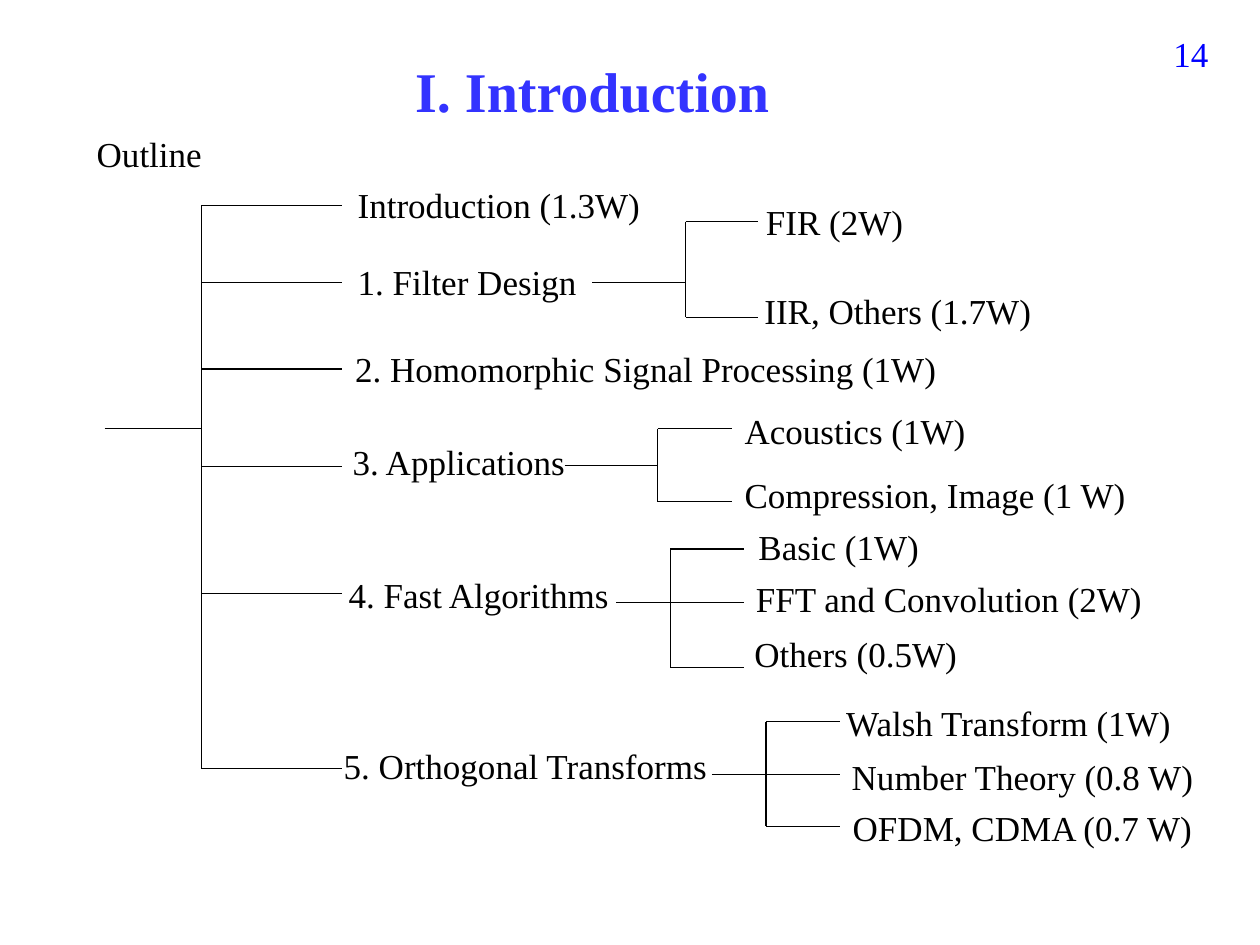
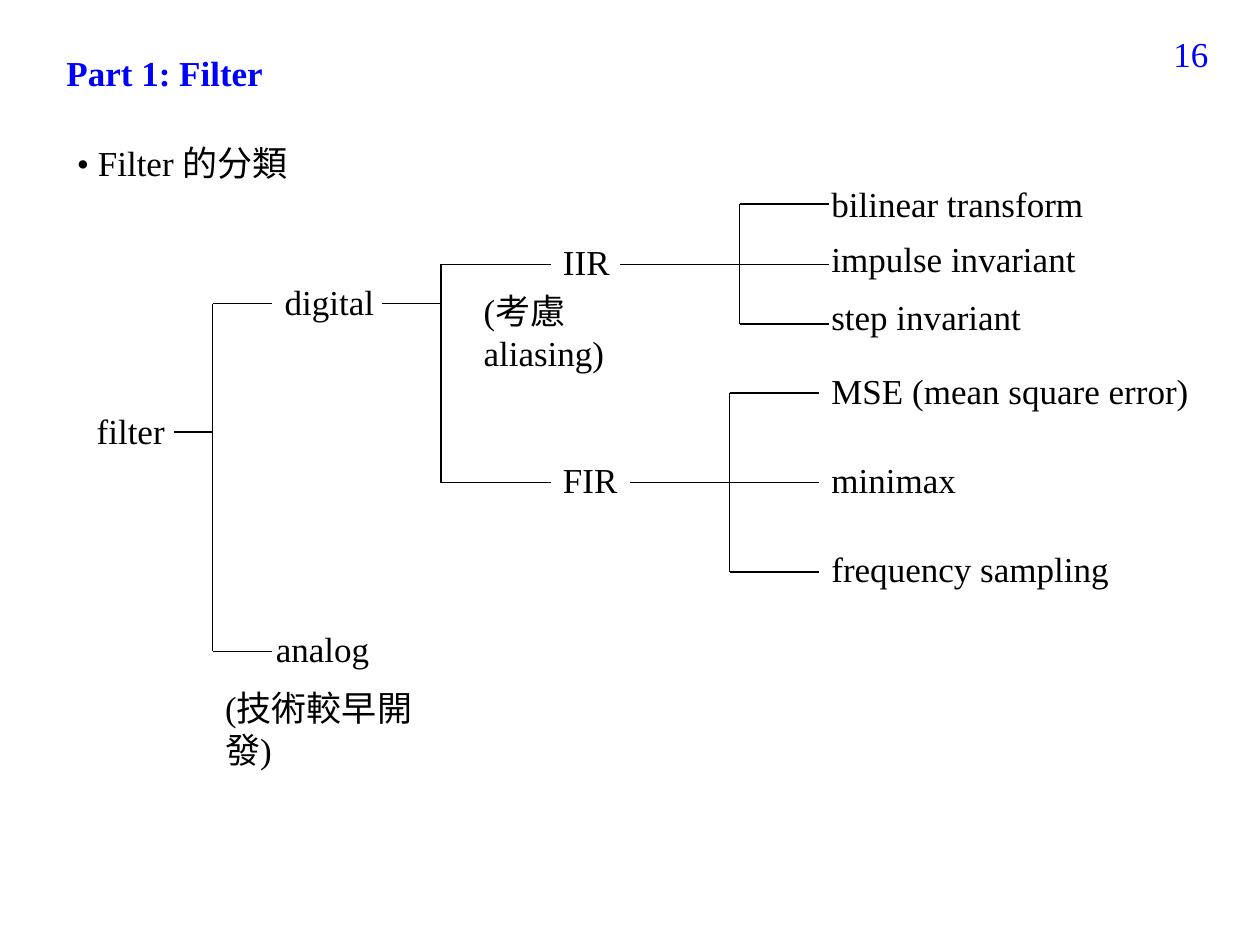
from dataclasses import dataclass

from lxml.etree import SubElement
from pptx import Presentation
from pptx.dml.color import RGBColor
from pptx.enum.shapes import MSO_CONNECTOR as Connector
from pptx.enum.text import PP_ALIGN as Align
from pptx.oxml.ns import qn
from pptx.util import Cm, Pt


@dataclass(frozen=True)
class Theme:
    font: str = "Times New Roman"
    ink: RGBColor = RGBColor(0, 0, 0)
    blue: RGBColor = RGBColor(0, 0, 255)
    title_blue: RGBColor = RGBColor(0x33, 0x33, 0xFF)
    body_size: Pt = Pt(20)
    title_size: Pt = Pt(32)
    line_width: Pt = Pt(0.75)


theme = Theme()


def add_text(slide, text, left, top, width, height=1.1, size=theme.body_size,
             color=theme.ink, bold=False, align=Align.LEFT):
    frame = slide.shapes.add_textbox(Cm(left), Cm(top), Cm(width), Cm(height)).text_frame
    frame.word_wrap = True
    paragraph = frame.paragraphs[0]
    paragraph.text = text
    paragraph.alignment = align
    paragraph.font.name = theme.font
    paragraph.font.size = size
    paragraph.font.bold = bold
    paragraph.font.color.rgb = color


def add_line(slide, x1, y1, x2, y2):
    line = slide.shapes.add_connector(Connector.STRAIGHT, Cm(x1), Cm(y1), Cm(x2), Cm(y2))
    line.line.color.rgb = theme.ink
    line.line.width = theme.line_width
    SubElement(line._element.spPr, qn("a:effectLst"))


presentation = Presentation()
presentation.slide_width = Cm(25.4)
presentation.slide_height = Cm(19.05)

# Course outline. Labels: text, left, top, width
outline_labels = [
    ("Outline", 1.7, 2.54, 2.82),
    ("Introduction (1.3W)", 6.96, 3.58, 6.25),
    ("1. Filter Design", 6.96, 5.13, 4.95),
    ("FIR (2W)", 15.19, 3.91, 3.3),
    ("IIR, Others (1.7W)", 15.16, 5.72, 6),
    ("2. Homomorphic Signal Processing (1W)", 6.91, 6.88, 12.4),
    ("3. Applications", 6.86, 8.76, 5),
    ("Acoustics (1W)", 14.76, 8.13, 5),
    ("Compression, Image (1 W)", 14.76, 9.42, 8.3),
    ("4. Fast Algorithms", 6.78, 11.43, 5.8),
    ("Basic (1W)", 15.04, 10.46, 3.8),
    ("FFT and Convolution (2W)", 14.99, 11.51, 8.4),
    ("Others (0.5W)", 14.96, 12.62, 4.8),
    ("5. Orthogonal Transforms", 6.68, 14.88, 8.1),
    ("Walsh Transform (1W)", 16.81, 14.02, 7.3),
    ("Number Theory (0.8 W)", 16.92, 15.11, 7.5),
    ("OFDM, CDMA (0.7 W)", 16.94, 16.13, 7.5),
]
# Brackets: stem start, stem height, spine, branch end, branch heights
outline_brackets = [
    (2.11, 8.64, 4.06, 6.9, [4.14, 5.69, 7.44, 9.4, 11.96, 15.49]),
    (11.94, 5.69, 13.82, 15.29, [4.47, 6.4]),
    (11.38, 9.38, 13.26, 14.76, [8.64, 10.11]),
    (12.42, 12.14, 13.51, 15, [11.07, 12.14, 13.46]),
    (14.35, 15.62, 15.44, 16.94, [14.55, 15.62, 16.66]),
]

# Filter classification, in the same form
filter_labels = [
    ("• Filter 的分類", 1.3, 2.72, 9.6),
    ("filter", 1.7, 8.13, 2.41),
    ("digital", 5.49, 5.54, 3.81),
    ("analog", 5.31, 12.52, 3.81),
    ("(技術較早開發)", 4.29, 13.72, 5.21),
    ("IIR", 11.1, 4.72, 2.21),
    ("(考慮aliasing)", 9.5, 5.72, 4.39),
    ("FIR", 11.1, 9.12, 2),
    ("bilinear transform", 16.51, 3.56, 5.8),
    ("impulse invariant", 16.51, 4.67, 5.8),
    ("step invariant", 16.51, 5.84, 5.8),
    ("MSE (mean square error)", 16.51, 7.32, 7.8),
    ("minimax", 16.51, 9.12, 4.2),
    ("frequency sampling", 16.51, 10.92, 7.4),
]
filter_brackets = [
    (3.51, 8.71, 4.29, 5.49, [6.12, 13.13]),
    (7.7, 6.12, 8.89, 11.1, [5.33, 9.73]),
    (12.5, 5.33, 14.91, 16.71, [4.11, 5.33, 6.53]),
    (12.7, 9.73, 14.71, 16.51, [7.92, 9.73, 11.53]),
]

# Headings
outline_title = dict(text="I. Introduction", left=2.34, top=1.02, width=19.2, height=1.6,
                     size=theme.title_size, color=theme.title_blue, align=Align.CENTER)
filter_title = dict(text="Part 1: Filter", left=1.09, top=0.91, width=6.6, color=theme.blue)

# Build both tree slides
for number, title, labels, brackets in [
    ("14", outline_title, outline_labels, outline_brackets),
    ("16", filter_title, filter_labels, filter_brackets),
]:
    slide = presentation.slides.add_slide(presentation.slide_layouts[6])
    add_text(slide, number, 18.69, 0.53, 5.92, 1.32, color=theme.blue, align=Align.RIGHT)
    add_text(slide, bold=True, **title)
    for stem_start, stem_y, spine, branch_end, branches in brackets:
        add_line(slide, stem_start, stem_y, spine, stem_y)
        add_line(slide, spine, branches[0], spine, branches[-1])
        for branch_y in branches:
            add_line(slide, spine, branch_y, branch_end, branch_y)
    for label in labels:
        add_text(slide, *label)

presentation.save("out.pptx")
